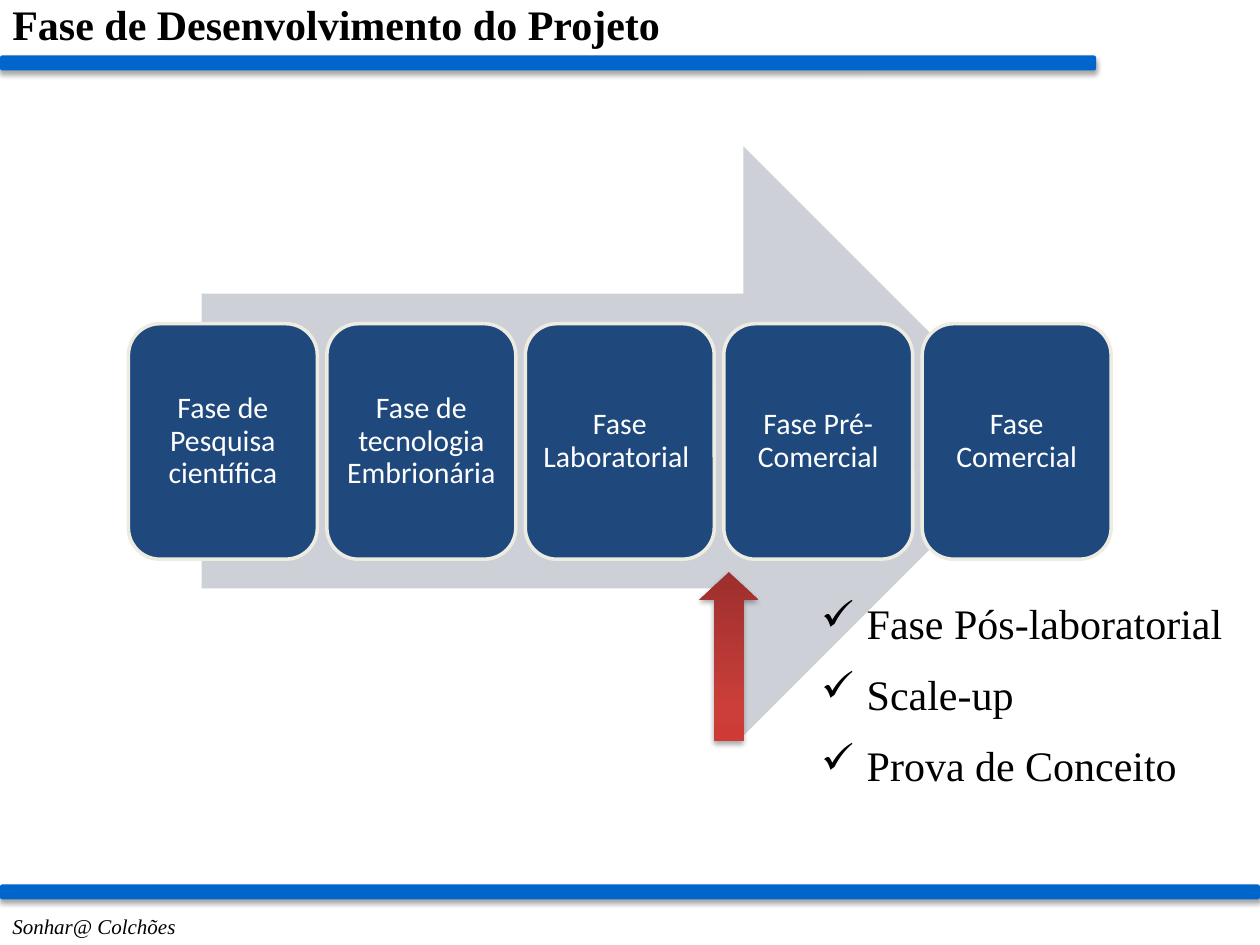
"""Build the project development phases slide."""
import pptx
import pptx.dml.color
import pptx.enum.shapes
import pptx.enum.text
import pptx.oxml
import pptx.oxml.ns
import pptx.util

Pt = pptx.util.Pt
SHAPE = pptx.enum.shapes.MSO_SHAPE
ALIGN = pptx.enum.text.PP_ALIGN
NS = pptx.oxml.ns.nsdecls("a")
SERIF = "Times New Roman"
SHADOW = (
    f'<a:effectLst {NS}><a:outerShdw blurRad="{Pt(3.1)}" dist="{Pt(1.8)}" '
    'dir="5400000" rotWithShape="0"><a:srgbClr val="000000">'
    '<a:alpha val="35000"/></a:srgbClr></a:outerShdw></a:effectLst>'
)
GRADIENT = f'<a:gradFill {NS} rotWithShape="1"><a:gsLst>' + "".join(
    f'<a:gs pos="{pos * 1000}"><a:srgbClr val="{c}"/></a:gs>'
    for pos, c in ((0, "9C2F2D"), (80, "CB3E3A"), (100, "CE3B37"))
) + '</a:gsLst><a:lin ang="16200000" scaled="0"/></a:gradFill>'


def color(value):
    """Turn a hex string into a colour."""
    return pptx.dml.color.RGBColor.from_string(value)


def add_shape(kind, box, fill):
    """Add a borderless, flat preset shape."""
    sp = s.shapes.add_shape(kind, *map(Pt, box))
    sp.shadow.inherit = False
    sp.fill.solid()
    sp.fill.fore_color.rgb = color(fill)
    sp.line.fill.background()
    return sp


prs = pptx.Presentation()
prs.slide_width, prs.slide_height = Pt(720), Pt(540)
s = prs.slides.add_slide(prs.slide_layouts[6])

add_shape(SHAPE.RIGHT_ARROW, (115.2, 83.5, 478.1, 337), "CDD0D7")

phases = (
    "Fase de Pesquisa científica",
    "Fase de tecnologia Embrionária",
    "Fase Laboratorial ",
    "Fase Pré-Comercial",
    "Fase Comercial",
)
for i, phase in enumerate(phases):
    sp = add_shape(SHAPE.ROUNDED_RECTANGLE, (73.4 + 113.4 * i, 185, 108, 134.6), "1F497D")
    sp.line.color.rgb = color("EEECE1")
    sp.line.width = Pt(2)
    tf = sp.text_frame
    tf.word_wrap = True
    tf.vertical_anchor = pptx.enum.text.MSO_ANCHOR.MIDDLE
    for side in ("left", "right", "top", "bottom"):
        setattr(tf, f"margin_{side}", Pt(5))
    p = tf.paragraphs[0]
    p.alignment = ALIGN.CENTER
    p.line_spacing = 0.9
    r = p.add_run()
    r.text = phase
    for name, value in {"name": "Calibri", "size": Pt(17)}.items():
        setattr(r.font, name, value)
    r.font.color.rgb = color("FFFFFF")

texts = (
    (("Fase de Desenvolvimento do Projeto",), (0, -4.3, 388, 36),
     {"size": Pt(24), "bold": True}, False, ALIGN.LEFT),
    (("Fase Pós-laboratorial", "Scale-up", "Prova de Conceito"), (462.2, 337.7, 257.8, 123.8),
     {"size": Pt(24)}, True, ALIGN.LEFT),
    (("Sonhar@ Colchões",), (0, 518.4, 130, 21.6),
     {"size": Pt(12), "italic": True}, False, ALIGN.LEFT),
)
for lines, box, formats, bulleted, align in texts:
    tf = s.shapes.add_textbox(*map(Pt, box)).text_frame
    tf.word_wrap = True
    for i, line in enumerate(lines):
        p = tf.add_paragraph() if i else tf.paragraphs[0]
        p.alignment = align
        r = p.add_run()
        r.text = line
        for name, value in {"name": SERIF, **formats}.items():
            setattr(r.font, name, value)
        r.font.color.rgb = color("000000")
        if bulleted:
            pPr = p._p.get_or_add_pPr()
            pPr.set("marL", str(Pt(26)))
            pPr.set("indent", str(-Pt(26)))
            for xml in (
                f'<a:spcBef {NS}><a:spcPct val="50000"/></a:spcBef>',
                f'<a:buChar {NS} char="✓"/>',
            ):
                pPr.append(pptx.oxml.parse_xml(xml))

marker = add_shape(SHAPE.DOWN_ARROW, (399.6, 326.9, 33.8, 96.5), "CB3E3A")
marker.rotation = 180
marker.adjustments[1] = 0.47
spPr = marker._element.spPr
spPr.replace(spPr.find(pptx.oxml.ns.qn("a:solidFill")), pptx.oxml.parse_xml(GRADIENT))

bars = [
    add_shape(SHAPE.ROUNDED_RECTANGLE, (0, top, width, 8.6), "0066CC")
    for top, width in ((505.4, 720), (31.7, 626.4))
]
for sp in (marker, *bars):
    spPr = sp._element.spPr
    spPr.replace(spPr.find(pptx.oxml.ns.qn("a:effectLst")), pptx.oxml.parse_xml(SHADOW))

prs.save("out.pptx")
